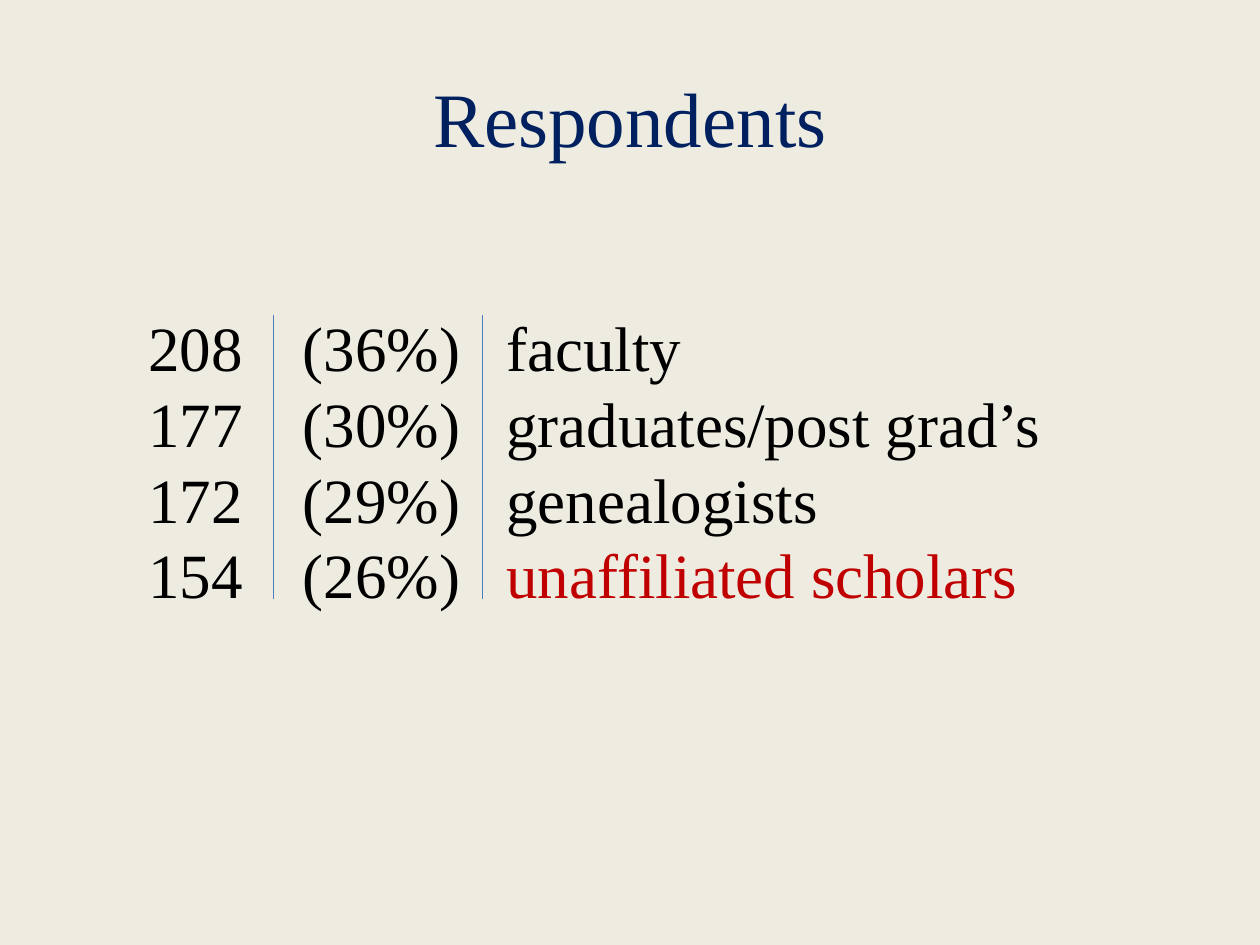
from lxml import etree
from pptx import Presentation
from pptx import util as u
from pptx.dml.color import RGBColor
from pptx.enum import shapes, text
from pptx.oxml.ns import qn

FONT = "Times New Roman"
BLACK, NAVY, RED, BLUE, CREAM = "000000", "002060", "C00000", "4B7EBC", "EEECE1"
COLUMN_TOP = 6.02
RULE_TOP, RULE_BOTTOM = 6.35, 12.07


def paint(target, color):
    """Set a colour format from a hex string."""
    target.rgb = RGBColor.from_string(color)


def apply(target, values):
    """Set every attribute named in a dict of format values."""
    for name, value in values.items():
        setattr(target, name, value)


def write(para, words, size, color, align):
    """Fill a paragraph with one formatted span."""
    para.alignment = align
    span = para.add_run()
    span.text = words
    apply(span.font, {"name": FONT, "size": u.Pt(size)})
    paint(span.font.color, color)


def add_title(page, words):
    """Place and fill the title placeholder."""
    title = page.shapes.title
    apply(title, {"left": u.Cm(1.27), "top": u.Cm(0.76),
                  "width": u.Cm(22.86), "height": u.Cm(3.18)})
    title.text_frame.vertical_anchor = text.MSO_ANCHOR.MIDDLE
    write(title.text_frame.paragraphs[0], words, 44, NAVY, text.PP_ALIGN.CENTER)


def add_column(page, left, width, height, entries, align=text.PP_ALIGN.LEFT):
    """Add a text column with one paragraph per (words, colour) entry."""
    box = page.shapes.add_textbox(u.Cm(left), u.Cm(COLUMN_TOP), u.Cm(width), u.Cm(height))
    frame = box.text_frame
    apply(frame, {"word_wrap": True, "auto_size": text.MSO_AUTO_SIZE.NONE,
                  "margin_top": u.Cm(0.21)})
    for index, (words, color) in enumerate(entries):
        para = frame.add_paragraph() if index else frame.paragraphs[0]
        para.line_spacing = u.Pt(43.2)
        write(para, words, 36, color, align)


def add_rule(page, x):
    """Add a thin vertical rule between two columns."""
    rule = page.shapes.add_connector(
        shapes.MSO_CONNECTOR.STRAIGHT,
        u.Cm(x), u.Cm(RULE_TOP), u.Cm(x), u.Cm(RULE_BOTTOM))
    rule.line.width = u.Pt(0.75)
    paint(rule.line.color, BLUE)
    etree.SubElement(rule._element.spPr, qn("a:effectLst"))


def main():
    """Build the respondents slide."""
    deck = Presentation()
    apply(deck, {"slide_width": u.Cm(25.4), "slide_height": u.Cm(19.05)})
    page = deck.slides.add_slide(deck.slide_layouts[5])
    page.background.fill.solid()
    paint(page.background.fill.fore_color, CREAM)

    add_title(page, "Respondents")
    groups = [("faculty", BLACK), ("graduates/post grad’s", BLACK),
              ("genealogists", BLACK), ("unaffiliated scholars", RED)]
    shares = [(f"({share}%)", BLACK) for share in (36, 30, 29, 26)]
    counts = [(str(count), BLACK) for count in (208, 177, 172, 154)]

    add_rule(page, 9.73)
    add_column(page, 9.96, 11.86, 7.95, groups)
    add_column(page, 5.72, 3.81, 6.4, shares, text.PP_ALIGN.RIGHT)
    add_rule(page, 5.51)
    add_column(page, 2.74, 2.54, 6.4, counts)
    deck.save("out.pptx")


if __name__ == "__main__":
    main()
